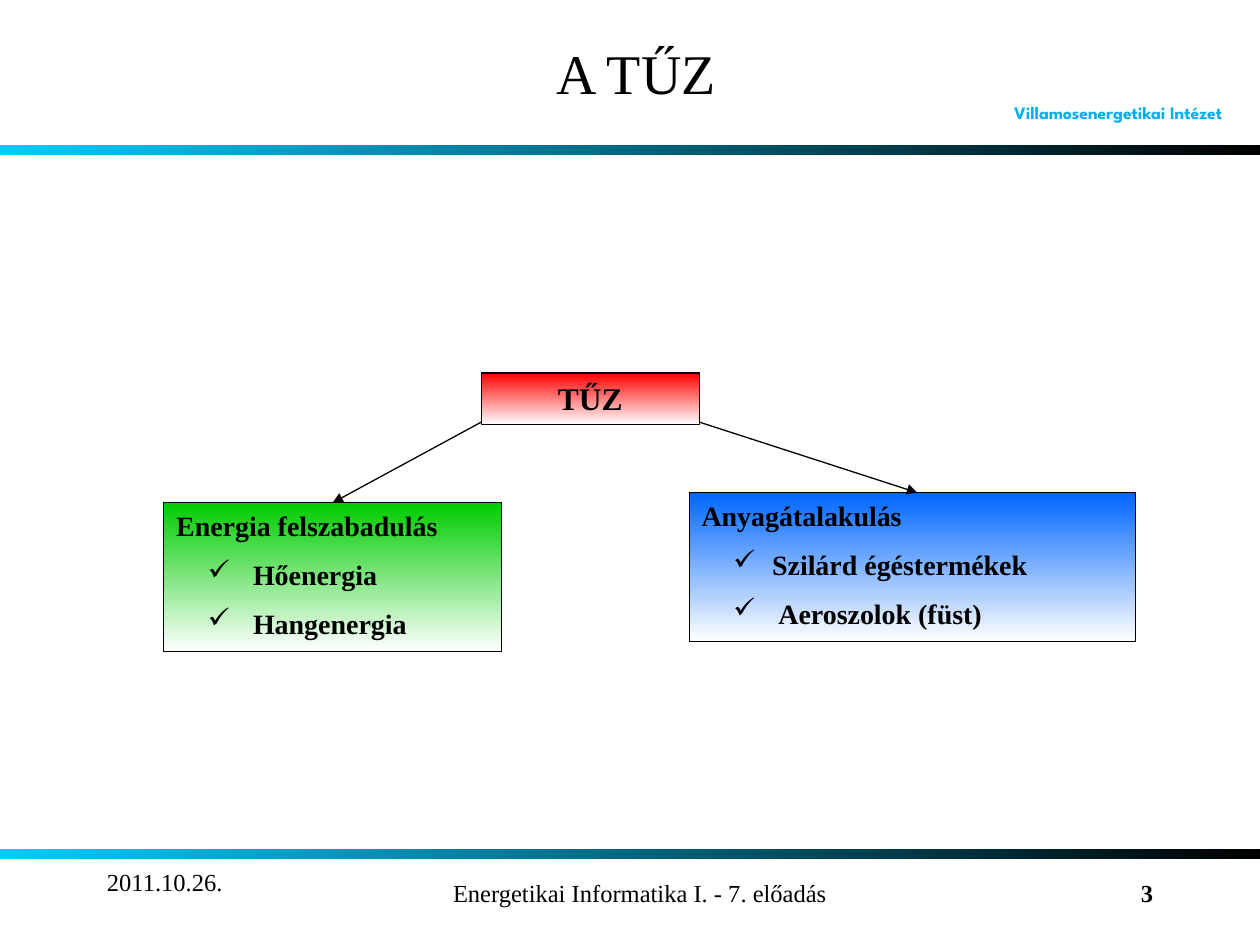
from dataclasses import dataclass

from lxml import etree
from pptx import Presentation
from pptx import util as u
from pptx.dml.color import RGBColor
from pptx.enum import shapes, text
from pptx.oxml.ns import qn


@dataclass(frozen=True)
class Theme:
    serif: str = "Times New Roman"
    brand_font: str = "League Spartan"
    black: str = "000000"
    white: str = "FFFFFF"
    cyan: str = "00CCFF"
    brand: str = "00B0F0"
    red: str = "FF0000"
    green: str = "00CC00"
    blue: str = "0066FF"
    title: int = 32
    root: int = 18
    branch: int = 16
    footer: int = 14
    small: int = 10


THEME = Theme()
ALIGN = text.PP_ALIGN
ANCHOR = text.MSO_ANCHOR


def inches(*values):
    return [u.Inches(value) for value in values]


def set_font(font, size, color=THEME.black, name=THEME.serif, bold=False):
    values = {"name": name, "size": u.Pt(size), "bold": bold}
    for key, value in values.items():
        setattr(font, key, value)
    font.color.rgb = RGBColor.from_string(color)


def set_frame(frame, anchor=ANCHOR.TOP):
    values = {"word_wrap": True, "auto_size": text.MSO_AUTO_SIZE.NONE,
              "vertical_anchor": anchor}
    for key, value in values.items():
        setattr(frame, key, value)


def write(para, wording, size, align=ALIGN.LEFT, **font):
    para.alignment = align
    span = para.add_run()
    span.text = wording
    set_font(span.font, size, **font)


def add_label(page, place, wording, size, align=ALIGN.LEFT, anchor=ANCHOR.TOP, **font):
    box = page.shapes.add_textbox(*inches(*place))
    set_frame(box.text_frame, anchor)
    write(box.text_frame.paragraphs[0], wording, size, align, **font)


def add_gradient_box(page, place, start, end, angle, outlined=False):
    box = page.shapes.add_shape(shapes.MSO_SHAPE.RECTANGLE, *inches(*place))
    box.shadow.inherit = False
    box.fill.gradient()
    box.fill.gradient_angle = angle
    for stop, color, position in zip(box.fill.gradient_stops, (start, end), (0, 1)):
        stop.color.rgb = RGBColor.from_string(color)
        stop.position = position
    if outlined:
        box.line.color.rgb = RGBColor.from_string(THEME.black)
        box.line.width = u.Pt(0.75)
    else:
        box.line.fill.background()
    set_frame(box.text_frame)
    return box


def add_check(para, text_left):
    """Hang a check mark a quarter inch in from the box margin."""
    props = para._p.get_or_add_pPr()
    props.set("marL", str(u.Inches(text_left)))
    props.set("indent", str(u.Inches(0.25 - text_left)))
    etree.SubElement(props, qn("a:buFont")).set("typeface", "Wingdings")
    etree.SubElement(props, qn("a:buChar")).set("char", "ü")


def add_branch(page, place, color, heading, items):
    box = add_gradient_box(page, place, color, THEME.white, 270, outlined=True)
    frame = box.text_frame
    write(frame.paragraphs[0], heading, THEME.branch, bold=True)
    for wording, text_left in items:
        para = frame.add_paragraph()
        para.space_before = u.Pt(8.7)
        add_check(para, text_left)
        write(para, wording, THEME.branch, bold=True)


def add_arrow(page, start, end):
    arrow = page.shapes.add_connector(
        shapes.MSO_CONNECTOR.STRAIGHT, *inches(*start, *end))
    arrow.line.color.rgb = RGBColor.from_string(THEME.black)
    arrow.line.width = u.Pt(0.75)
    etree.SubElement(arrow.line._get_or_add_ln(), qn("a:tailEnd")).set("type", "triangle")
    etree.SubElement(arrow._element.spPr, qn("a:effectLst"))


def add_title(page, wording):
    title = page.shapes.title
    title.left, title.top, title.width, title.height = inches(1.3, 0.28, 7.5, 0.58)
    set_frame(title.text_frame, ANCHOR.MIDDLE)
    write(title.text_frame.paragraphs[0], wording, THEME.title, ALIGN.CENTER)


def main():
    deck = Presentation()
    deck.slide_width, deck.slide_height = inches(10, 7.5)
    page = deck.slides.add_slide(deck.slide_layouts[5])

    # Header and footer bands
    for top in (1.15, 6.74):
        add_gradient_box(page, (0, top, 10, 0.08), THEME.cyan, THEME.black, 0)
    add_label(page, (7.95, 0.76, 2.05, 0.27), "Villamosenergetikai Intézet", THEME.small,
              anchor=ANCHOR.MIDDLE, color=THEME.brand, name=THEME.brand_font, bold=True)
    add_title(page, "A TŰZ")

    # Footer texts
    add_label(page, (0.75, 6.83, 2.08, 0.5), "2011.10.26.", THEME.footer)
    add_label(page, (2.08, 6.92, 6, 0.42), "Energetikai Informatika I. - 7. előadás",
              THEME.footer, ALIGN.CENTER)
    add_label(page, (7.17, 6.92, 2.08, 0.42), "3", THEME.footer, ALIGN.RIGHT, bold=True)

    # Root of the tree
    root = add_gradient_box(page, (3.82, 2.96, 1.73, 0.41), THEME.red, THEME.white, 270,
                            outlined=True)
    write(root.text_frame.paragraphs[0], "TŰZ", THEME.root, ALIGN.CENTER, bold=True)

    # Branches, each item with its text indent
    add_branch(page, (1.3, 3.99, 2.68, 1.18), THEME.green, "Energia felszabadulás",
               [("Hőenergia", 0.61), ("Hangenergia", 0.61)])
    add_branch(page, (5.47, 3.91, 3.54, 1.18), THEME.blue, "Anyagátalakulás",
               [("Szilárd égéstermékek", 0.56), ("Aeroszolok (füst)", 0.61)])

    # Arrows from the root to the branches
    add_arrow(page, (5.55, 3.35), (7.28, 3.91))
    add_arrow(page, (3.82, 3.35), (2.64, 3.99))

    deck.save("out.pptx")


if __name__ == "__main__":
    main()
